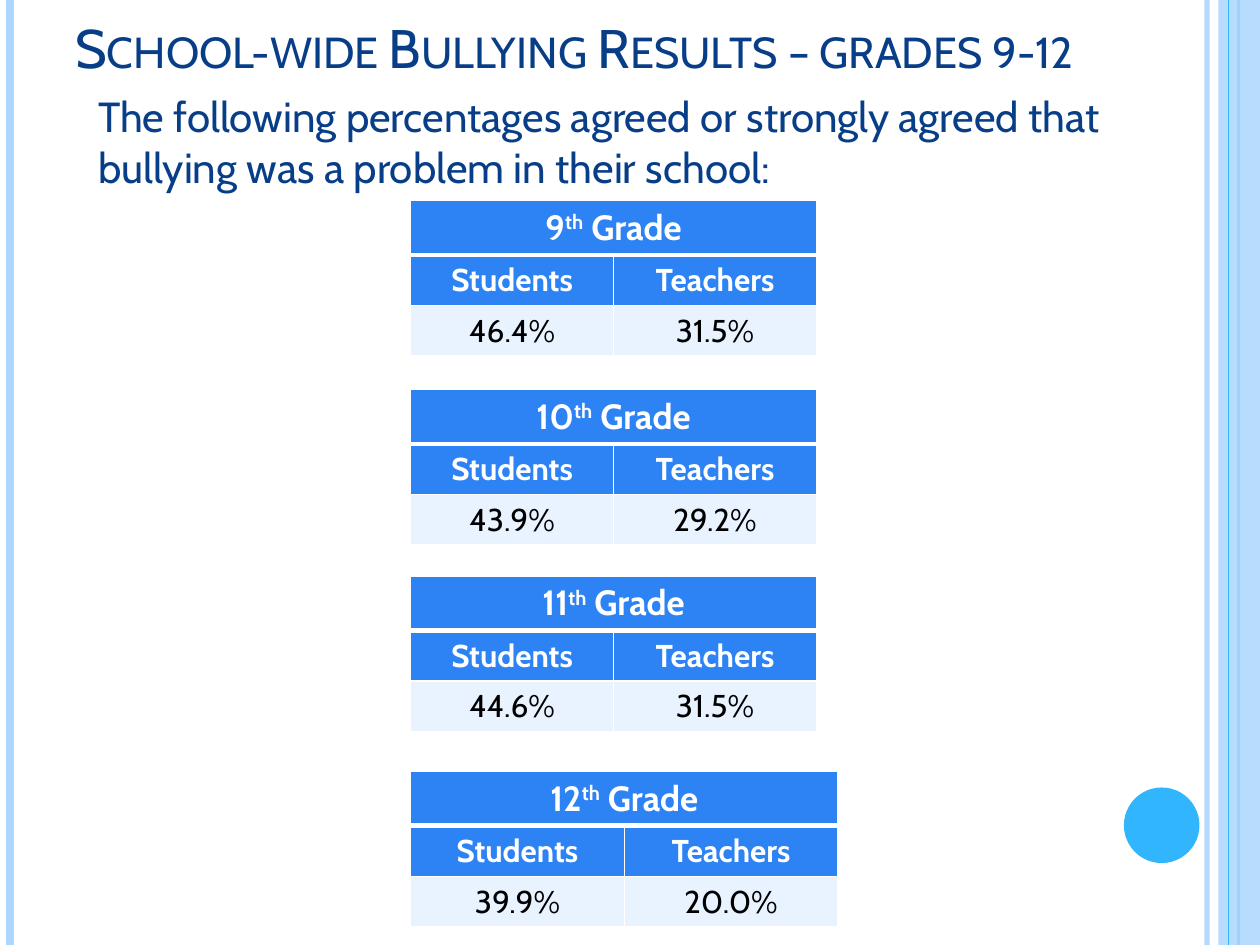
from dataclasses import dataclass

from lxml import etree
from pptx import Presentation, util as u
from pptx.dml.color import RGBColor
from pptx.enum import shapes, text
from pptx.oxml import ns


@dataclass(frozen=True)
class Theme:
    font: str = "Cabin"
    navy: str = "073E87"
    sky: str = "31B6FD"
    pale: str = "AED7FE"
    blue: str = "2D83F4"
    tint: str = "E8F3FF"
    white: str = "FFFFFF"
    black: str = "000000"
    title: int = 31
    lead: int = 24
    head: int = 20
    body: int = 18


def add(node, tag, **attrs):
    return etree.SubElement(node, ns.qn(tag), attrs)


class Deck:
    """Draws styled elements on the current slide."""

    def __init__(self, theme):
        self.theme = theme
        self.file = Presentation()
        self.file.slide_width, self.file.slide_height = u.Inches(10), u.Inches(7.5)
        self.slide = self.file.slides.add_slide(self.file.slide_layouts[6])

    def fade(self, fill, alpha):
        tone = fill._xPr.find(".//" + ns.qn("a:srgbClr"))
        add(tone, "a:alpha", val=str(alpha * 1000))

    def font(self, para, size, color, bold=False):
        font = para.font
        font.name, font.size, font.bold = self.theme.font, u.Pt(size), bold
        font.color.rgb = RGBColor.from_string(color)

    def rule(self, x, width, color, alpha=100):
        line = self.slide.shapes.add_connector(
            shapes.MSO_CONNECTOR.STRAIGHT, u.Inches(x), 0, u.Inches(x), u.Inches(7.5))
        line.line.width = u.Pt(width)
        line.line.color.rgb = RGBColor.from_string(color)
        add(line._element.spPr, "a:effectLst")
        if alpha < 100:
            self.fade(line.line.fill, alpha)

    def shape(self, kind, box, color, alpha=100):
        shape = self.slide.shapes.add_shape(kind, *map(u.Inches, box))
        shape.shadow.inherit = False
        shape.fill.solid()
        shape.fill.fore_color.rgb = RGBColor.from_string(color)
        shape.line.fill.background()
        if alpha < 100:
            self.fade(shape.fill, alpha)

    def text(self, words, box, size, caps=False):
        frame = self.slide.shapes.add_textbox(*map(u.Inches, box)).text_frame
        frame.word_wrap = True
        frame.vertical_anchor = text.MSO_ANCHOR.BOTTOM
        para = frame.paragraphs[0]
        run = para.add_run()
        run.text = words
        self.font(para, size, self.theme.navy)
        if caps:
            run._r.get_or_add_rPr().set("cap", "small")

    def cell(self, cell, parts, size, color, fill, bold=True, base=1):
        para = cell.text_frame.paragraphs[0]
        para.alignment = text.PP_ALIGN.CENTER
        for part, lift in parts:
            run = para.add_run()
            run.text = part
            if lift:
                run._r.get_or_add_rPr().set("baseline", str(lift * 1000))
        self.font(para, size, color, bold)
        props = cell._tc.get_or_add_tcPr()
        for side, width in zip("LRTB", (1, 1, 1, base)):
            edge = add(props, "a:ln" + side, w=str(u.Pt(width)))
            add(add(edge, "a:solidFill"), "a:srgbClr", val=self.theme.white)
        cell.fill.solid()
        cell.fill.fore_color.rgb = RGBColor.from_string(fill)

    def table(self, grade, rates, top, width):
        t = self.theme
        rows = (0.43, 0.4, 0.4)
        grid = self.slide.shapes.add_table(
            3, 2, *map(u.Inches, (3.26, top, width, sum(rows)))).table
        for row, height in zip(grid.rows, rows):
            row.height = u.Inches(height)
        grid.cell(0, 0).merge(grid.cell(0, 1))
        head = [(str(grade), 0), ("th", 30), (" Grade", 0)]
        for col, (name, rate) in enumerate(zip(("Students", "Teachers"), rates)):
            self.cell(grid.cell(0, col), [] if col else head, t.head, t.white, t.blue, base=3)
            self.cell(grid.cell(1, col), [(name, 0)], t.body, t.white, t.blue)
            self.cell(grid.cell(2, col), [(rate, 0)], t.body, t.black, t.tint, bold=False)


def main():
    t = Theme()
    deck = Deck(t)
    deck.rule(9.58, 3, t.pale, 93)
    deck.rule(0.08, 4.5, t.pale)
    deck.rule(9.83, 1.5, t.sky)
    deck.shape(shapes.MSO_SHAPE.RECTANGLE, (9.67, 0, 0.33, 7.5), t.pale, 87)
    deck.rule(9.75, 0.75, t.sky)
    deck.shape(shapes.MSO_SHAPE.OVAL, (8.92, 6.25, 0.6, 0.6), t.sky)
    deck.text("The following percentages agreed or strongly agreed that "
              "bullying was a problem in their school:", (0.68, 0.68, 8.2, 0.89), t.lead)
    deck.text("School-wide Bullying Results – grades 9-12",
              (0.5, 0.15, 8.74, 0.53), t.title, caps=True)
    for grade, rates, top, width in (
        (9, ("46.4%", "31.5%"), 1.59, 3.22),
        (10, ("43.9%", "29.2%"), 3.09, 3.22),
        (11, ("44.6%", "31.5%"), 4.57, 3.22),
        (12, ("39.9%", "20.0%"), 6.12, 3.39),
    ):
        deck.table(grade, rates, top, width)
    deck.file.save("out.pptx")


if __name__ == "__main__":
    main()
